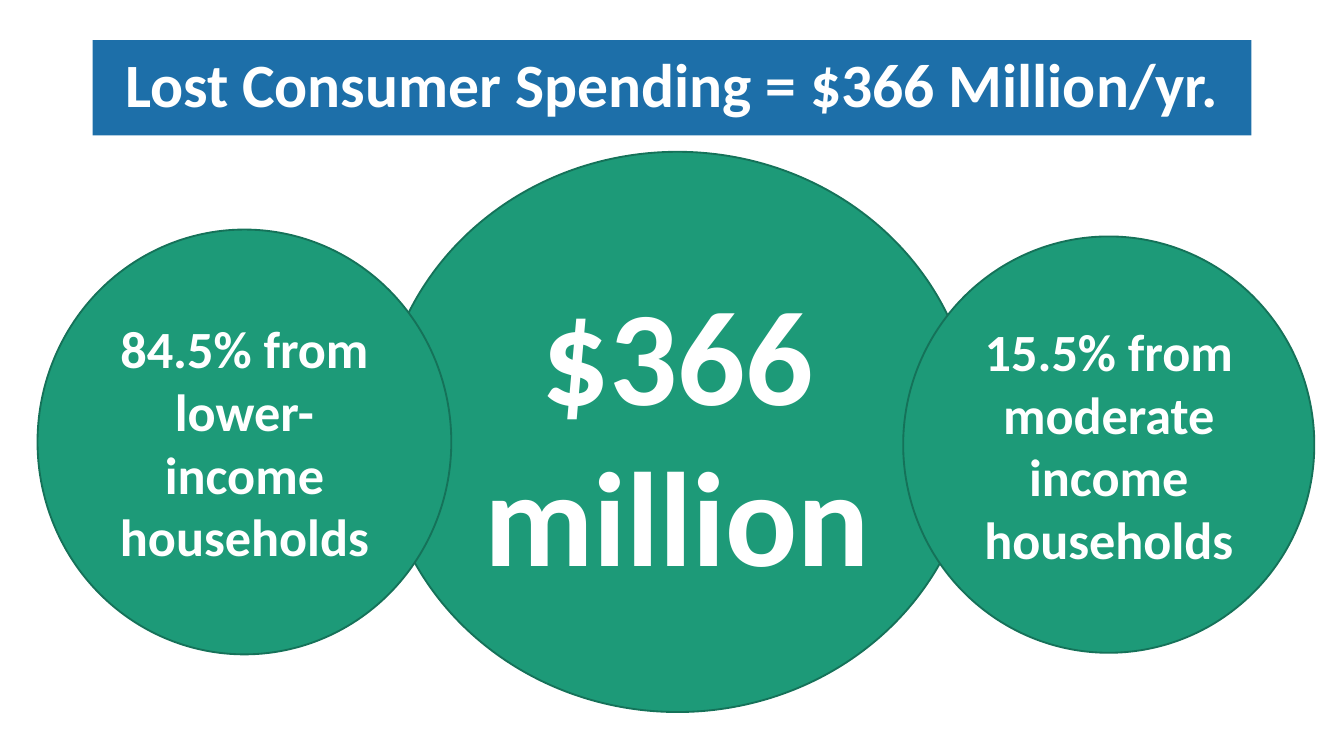
"""Build the lost consumer spending slide: a banner over three overlapping circles."""
import pptx
import pptx.dml.color
import pptx.enum.shapes
import pptx.enum.text
import pptx.util

Cm = pptx.util.Cm
SHAPE = pptx.enum.shapes.MSO_SHAPE

THEME = {
    "font": "Calibri",
    "text": "FFFFFF",
    "banner": "1D6FA9",
    "circle": "1D9A78",
    "outline": "157259",
    "title_size": 33,
    "total_size": 72,
    "share_size": 28,
}

TITLE = "Lost Consumer Spending = $366 Million/yr."
TITLE_BOX = (1.75, 0.76, 21.9, 1.8)
CIRCLES = [
    ("$366 million", "total_size", (7.19, 2.87, 11.23, 10.59)),
    ("84.5% from lower-income households", "share_size", (0.71, 4.34, 7.82, 8.03)),
    ("15.5% from moderate income households", "share_size", (17.07, 4.47, 7.77, 7.87)),
]


def rgb(name):
    return pptx.dml.color.RGBColor.from_string(THEME[name])


def add_text_shape(s, text, *, kind, box, fill, size, line=None, spacing=None, inset=0.13):
    sp = s.shapes.add_shape(kind, *(Cm(v) for v in box))
    sp.shadow.inherit = False
    sp.fill.solid()
    sp.fill.fore_color.rgb = rgb(fill)
    if line:
        sp.line.color.rgb = rgb(line)
        sp.line.width = pptx.util.Pt(1)
    else:
        sp.line.fill.background()
    tf = sp.text_frame
    tf.word_wrap = True
    tf.vertical_anchor = pptx.enum.text.MSO_ANCHOR.MIDDLE
    tf.margin_left = tf.margin_right = Cm(0.25)
    tf.margin_top = tf.margin_bottom = Cm(inset)
    p = tf.paragraphs[0]
    p.alignment = pptx.enum.text.PP_ALIGN.CENTER
    p.line_spacing = spacing
    r = p.add_run()
    r.text = text
    r.font.name = THEME["font"]
    r.font.size = pptx.util.Pt(THEME[size])
    r.font.bold = True
    r.font.color.rgb = rgb("text")
    return sp


def main():
    prs = pptx.Presentation()
    prs.slide_width, prs.slide_height = Cm(25.4), Cm(14.29)
    s = prs.slides.add_slide(prs.slide_layouts[6])
    add_text_shape(s, TITLE, kind=SHAPE.RECTANGLE, box=TITLE_BOX, fill="banner",
                   size="title_size", spacing=0.9, inset=0.25)
    for text, size, box in CIRCLES:
        add_text_shape(s, text, kind=SHAPE.OVAL, box=box, fill="circle",
                       size=size, line="outline")
    prs.save("out.pptx")


if __name__ == "__main__":
    main()
